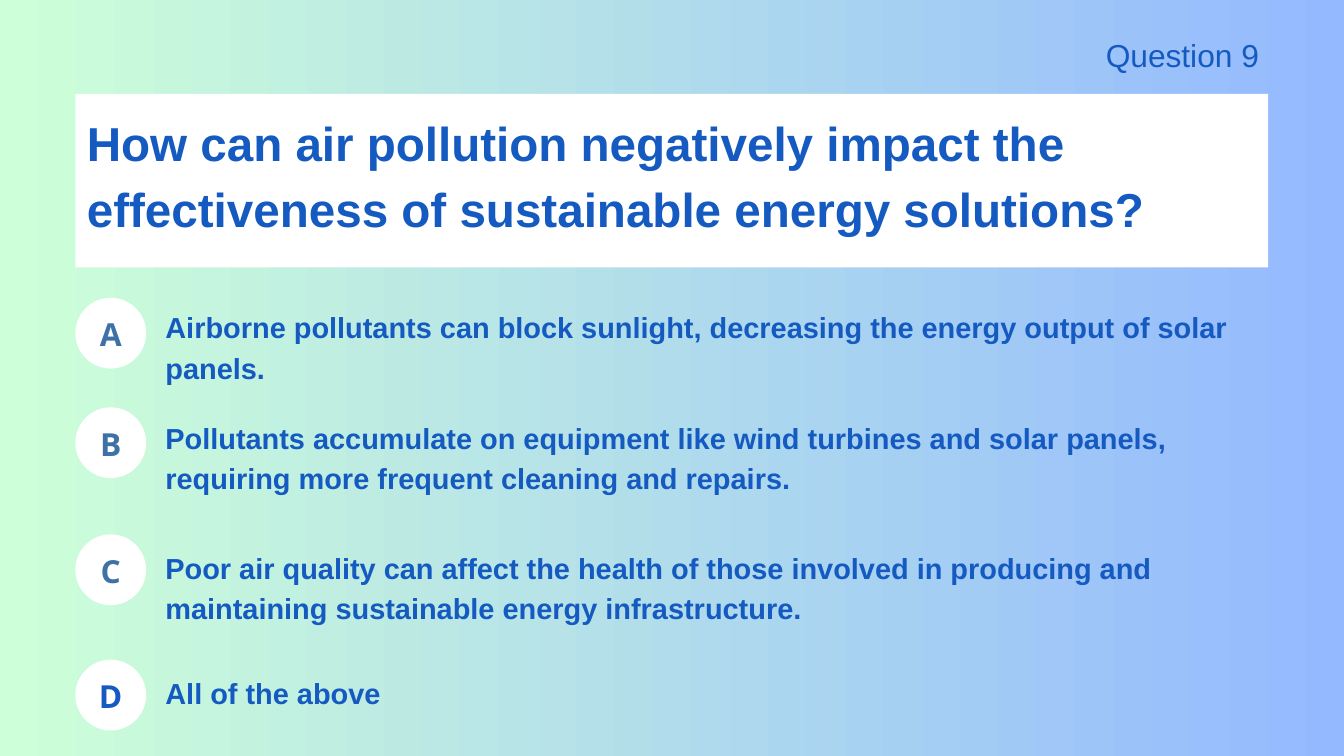
from pptx import Presentation
from pptx.dml.color import RGBColor
from pptx.enum import shapes, text
from pptx.oxml.xmlchemy import OxmlElement
from pptx.util import Pt

BLUE = RGBColor(0x15, 0x5A, 0xC1)
STEEL = RGBColor(0x3E, 0x72, 0xA6)
WHITE = RGBColor(0xFF, 0xFF, 0xFF)
MINT = RGBColor(0xCD, 0xFF, 0xD8)
SKY = RGBColor(0x94, 0xB9, 0xFF)

LEFT = 80.7
DISC = 75.9

ANSWERS = [
    ("A", 319, STEEL, 0,
     "Airborne pollutants can block sunlight, decreasing the energy output of solar panels."),
    ("B", 436.4, STEEL, 32,
     "Pollutants accumulate on equipment like wind turbines and solar panels, "
     "requiring more frequent cleaning and repairs."),
    ("C", 572.5, STEEL, 52.2,
     "Poor air quality can affect the health of those involved in producing and "
     "maintaining sustainable energy infrastructure."),
    ("D", 706.8, BLUE, 47,
     "All of the above"),
]


def place(item, x, y, w, h):
    item.left, item.top, item.width, item.height = Pt(x), Pt(y), Pt(w), Pt(h)


def frame(item, anchor=text.MSO_ANCHOR.TOP, bottom=0):
    tf = item.text_frame
    tf.auto_size = text.MSO_AUTO_SIZE.NONE
    tf.word_wrap = True
    tf.vertical_anchor = anchor
    tf.margin_left = tf.margin_top = tf.margin_right = 0
    tf.margin_bottom = Pt(bottom)
    return tf


def write(para, words, size, lead, color=BLUE, font="Arial", bold=True,
          align=text.PP_ALIGN.LEFT, gap=0):
    para.alignment = align
    para.line_spacing = Pt(lead)
    para.space_before = Pt(gap)
    para.space_after = Pt(0)
    run = para.add_run()
    run.text = words
    run.font.name = font
    run.font.size = Pt(size)
    run.font.bold = bold
    run.font.color.rgb = color


def panel(slide, kind, x, y, w, h):
    item = slide.shapes.add_shape(kind, Pt(x), Pt(y), Pt(w), Pt(h))
    item.shadow.inherit = False
    item.fill.solid()
    item.fill.fore_color.rgb = WHITE
    item.line.fill.background()
    return item


def paint(slide):
    fill = slide.background.fill
    fill.gradient()
    fill.gradient_angle = 0
    for stop, color in zip(fill.gradient_stops, (MINT, SKY)):
        stop.color.rgb = color


def label(slide):
    box = slide.shapes.add_textbox(Pt(834), Pt(31), Pt(515), Pt(51))
    write(frame(box).paragraphs[0], "Question 9", 34, 47.6, bold=False,
          align=text.PP_ALIGN.RIGHT)


def heading(slide):
    title = slide.shapes.title
    banner = panel(slide, shapes.MSO_SHAPE.RECTANGLE, LEFT, 100.5, 1278, 186)
    title.element.addprevious(banner.element)
    place(title, 93, 111.6, 1266, 148)
    write(frame(title).paragraphs[0],
          "How can air pollution negatively impact the effectiveness "
          "of sustainable energy solutions?", 51, 71.4)


def badge(slide, mark, y, color):
    disc = panel(slide, shapes.MSO_SHAPE.OVAL, LEFT, y, DISC, DISC)
    tf = frame(disc, text.MSO_ANCHOR.MIDDLE, 5)
    write(tf.paragraphs[0], mark, 34, 47.6, color, "Open Sans",
          align=text.PP_ALIGN.CENTER)


def answers(slide):
    body = slide.placeholders[1]
    place(body, 177.2, 325.5, 1181.5, 438)
    tf = frame(body)
    for i, (mark, y, color, gap, words) in enumerate(ANSWERS):
        para = tf.add_paragraph() if i else tf.paragraphs[0]
        write(para, words, 31, 43.4, gap=gap)
        props = para._p.get_or_add_pPr()
        props.set("marL", "0")
        props.set("indent", "0")
        props.append(OxmlElement("a:buNone"))
        badge(slide, mark, y, color)


def main():
    deck = Presentation()
    deck.slide_width, deck.slide_height = Pt(1440), Pt(810)
    slide = deck.slides.add_slide(deck.slide_layouts[1])
    paint(slide)
    heading(slide)
    label(slide)
    answers(slide)
    deck.save("out.pptx")


if __name__ == "__main__":
    main()
